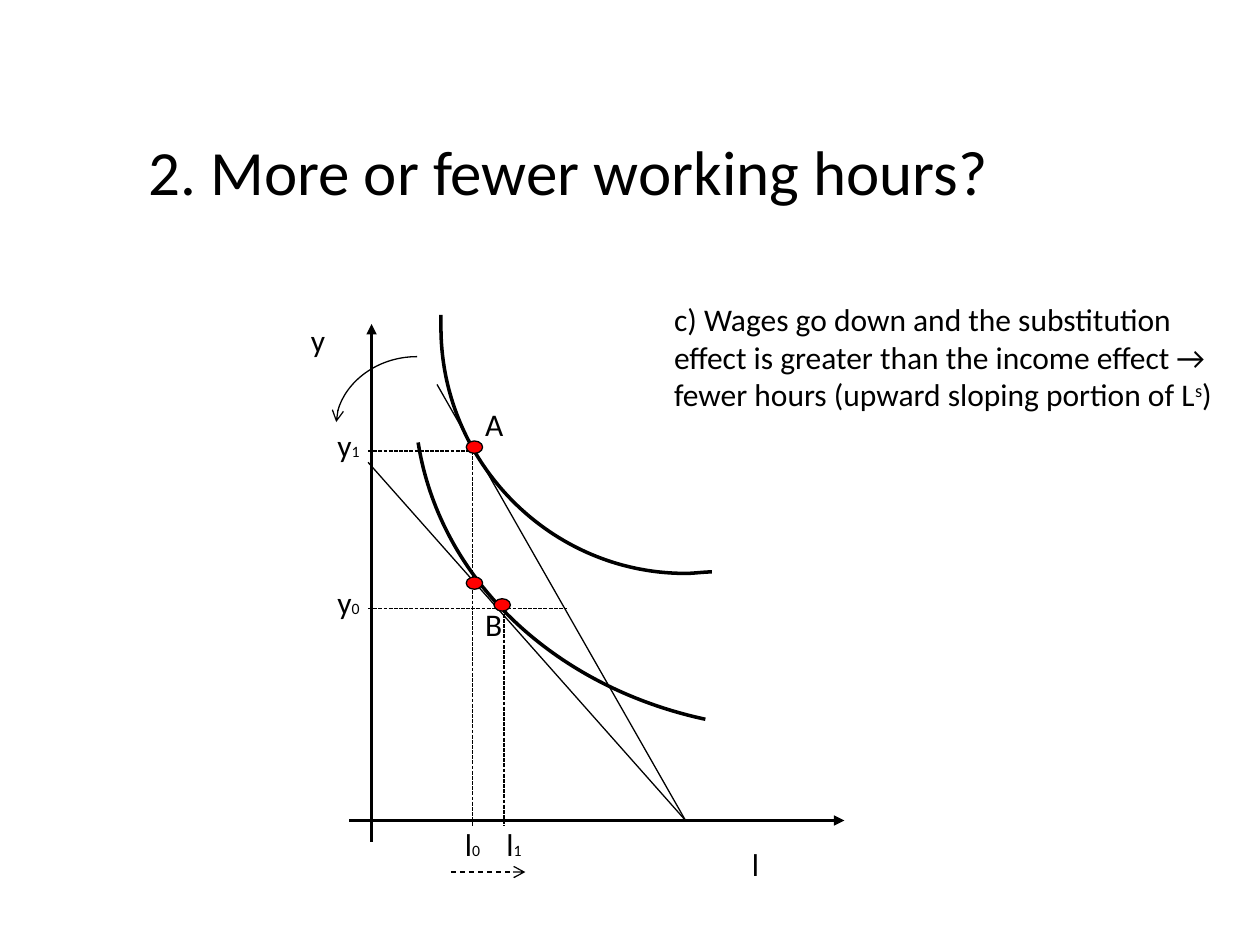
from dataclasses import dataclass

from lxml import etree
from pptx import Presentation
from pptx import util as u
from pptx.dml.color import RGBColor
from pptx.enum import dml, shapes, text
from pptx.oxml import ns


@dataclass(frozen=True)
class Theme:
    ink: RGBColor = RGBColor(0, 0, 0)
    red: RGBColor = RGBColor(255, 0, 0)
    font: str = "Calibri"
    title: int = 36
    body: int = 18
    sub: int = 9
    thin: float = 0.75
    axis: float = 1.75
    curve: float = 2


THEME = Theme()
DOTS = dml.MSO_LINE.SQUARE_DOT
DASH = dml.MSO_LINE.DASH
LABEL = 1.02  # height of a one-line label, cm


def add_text(slide, x, y, wide, high, runs, wrap=False):
    """Add a text box; each run is (text, size, baseline shift in percent)."""
    frame = slide.shapes.add_textbox(
        u.Cm(x), u.Cm(y), u.Cm(wide), u.Cm(high)).text_frame
    frame.word_wrap = wrap
    frame.auto_size = text.MSO_AUTO_SIZE.SHAPE_TO_FIT_TEXT
    for words, size, shift in runs:
        run = frame.paragraphs[0].add_run()
        run.text = words
        run.font.name = THEME.font
        run.font.size = u.Pt(size)
        run.font.color.rgb = THEME.ink
        if shift:
            run.font._element.set("baseline", str(shift * 1000))


def add_label(slide, x, y, wide, name, sub="", wrap=False):
    runs = [(name, THEME.body, 0)]
    if sub:
        runs.append((sub, THEME.sub, 0))
    add_text(slide, x, y, wide, LABEL, runs, wrap)


def ink_line(shape, width):
    shape.line.color.rgb = THEME.ink
    shape.line.width = u.Pt(width)


def add_line(slide, start, end, width=THEME.thin, dash=None, head=None):
    ends = [u.Cm(n) for n in (*start, *end)]
    line = slide.shapes.add_connector(shapes.MSO_CONNECTOR.STRAIGHT, *ends)
    ink_line(line, width)
    if dash:
        line.line.dash_style = dash
    if head:
        tip = etree.SubElement(line.get_or_add_ln(), ns.qn("a:tailEnd"))
        tip.set("type", head)
    etree.SubElement(line.element.spPr, ns.qn("a:effectLst"))
    return line


def add_arc(slide, start, end):
    """Add an arrow that bends once, from level to upright."""
    line = add_line(slide, start, end, head="arrow")
    shape = line.element.spPr.find(ns.qn("a:prstGeom"))
    shape.set("prst", "curvedConnector2")


def add_curve(slide, start, *points):
    """Add a Bezier curve; every three points after the start make one arc."""
    pen = slide.shapes.build_freeform(u.Cm(start[0]), u.Cm(start[1]))
    pen.add_line_segments([(u.Cm(x), u.Cm(y)) for x, y in points], close=False)
    curve = pen.convert_to_shape()
    steps = list(curve.element.iter(ns.qn("a:lnTo")))
    for i in range(0, len(steps), 3):
        arc = etree.Element(ns.qn("a:cubicBezTo"))
        steps[i].addprevious(arc)
        for step in steps[i:i + 3]:
            arc.append(step[0])
            step.getparent().remove(step)
    curve.shadow.inherit = False
    curve.fill.background()
    ink_line(curve, THEME.curve)


def add_dot(slide, x, y):
    dot = slide.shapes.add_shape(
        shapes.MSO_SHAPE.OVAL, u.Cm(x), u.Cm(y), u.Cm(0.33), u.Cm(0.25))
    dot.shadow.inherit = False
    dot.fill.solid()
    dot.fill.fore_color.rgb = THEME.red
    ink_line(dot, THEME.thin)


def draw_graph(slide):
    base, tick, foot = 16.54, 7.42, 16.66
    old_x, new_x, high_y, low_y = 9.53, 10.16, 9.09, 12.27

    add_line(slide, (7.49, 16.97), (7.49, 6.53), THEME.axis, head="triangle")
    add_line(slide, (7.04, base), (17.02, base), THEME.axis, head="triangle")
    for start in ((tick, 9.32), (8.81, 7.75)):
        add_line(slide, start, (13.82, base))

    add_curve(slide, (14.22, 14.5), (11.15, 13.84), (8.86, 11.66), (8.43, 8.92))
    add_curve(slide, (14.35, 11.53),
              (14.17, 11.53), (14, 11.56), (13.82, 11.56),
              (11.1, 11.56), (8.89, 9.32), (8.89, 6.6),
              (8.89, 6.5), (8.89, 6.43), (8.89, 6.35))

    for start, end in (((tick, low_y), (11.43, low_y)),
                       ((new_x, low_y), (new_x, foot)),
                       ((old_x, high_y), (old_x, foot)),
                       ((tick, high_y), (old_x, high_y))):
        add_line(slide, start, end, dash=DOTS)
    add_line(slide, (9.09, 17.58), (10.59, 17.58), dash=DASH, head="arrow")
    add_arc(slide, (8.41, 7.19), (6.78, 8.51))

    for x, y in ((9.4, 8.89), (9.96, 12.07), (9.4, 11.63)):
        add_dot(slide, x, y)


def name_parts(slide):
    add_label(slide, 6.02, 6.35, 0.81, "y")
    add_label(slide, 14.91, 16.92, 0.66, "l")
    for x, sub in ((9.12, "0"), (9.96, "1")):
        add_label(slide, x, 16.51, 0.81, "l", sub)
    for y, sub in ((11.63, "0"), (8.46, "1")):
        add_label(slide, 6.55, y, 0.97, "y", sub)
    for y, name in ((8.05, "A"), (12.07, "B")):
        add_label(slide, 9.53, y, 0.84, name, wrap=True)


def main():
    deck = Presentation()
    deck.slide_width, deck.slide_height = u.Cm(25.4), u.Cm(19.05)
    slide = deck.slides.add_slide(deck.slide_layouts[6])
    add_text(slide, 2.74, 2.54, 17.6, 1.8,
             [("2. More or fewer working hours?", THEME.title, 0)])
    draw_graph(slide)
    name_parts(slide)
    add_text(slide, 13.34, 5.92, 11.63, 2.57, [
        ("c) Wages go down and the substitution effect is greater than the "
         "income effect → fewer hours (upward sloping portion of L",
         THEME.body, 0),
        ("s", THEME.body, 30),
        (")", THEME.body, 0)], wrap=True)
    deck.save("out.pptx")


if __name__ == "__main__":
    main()
